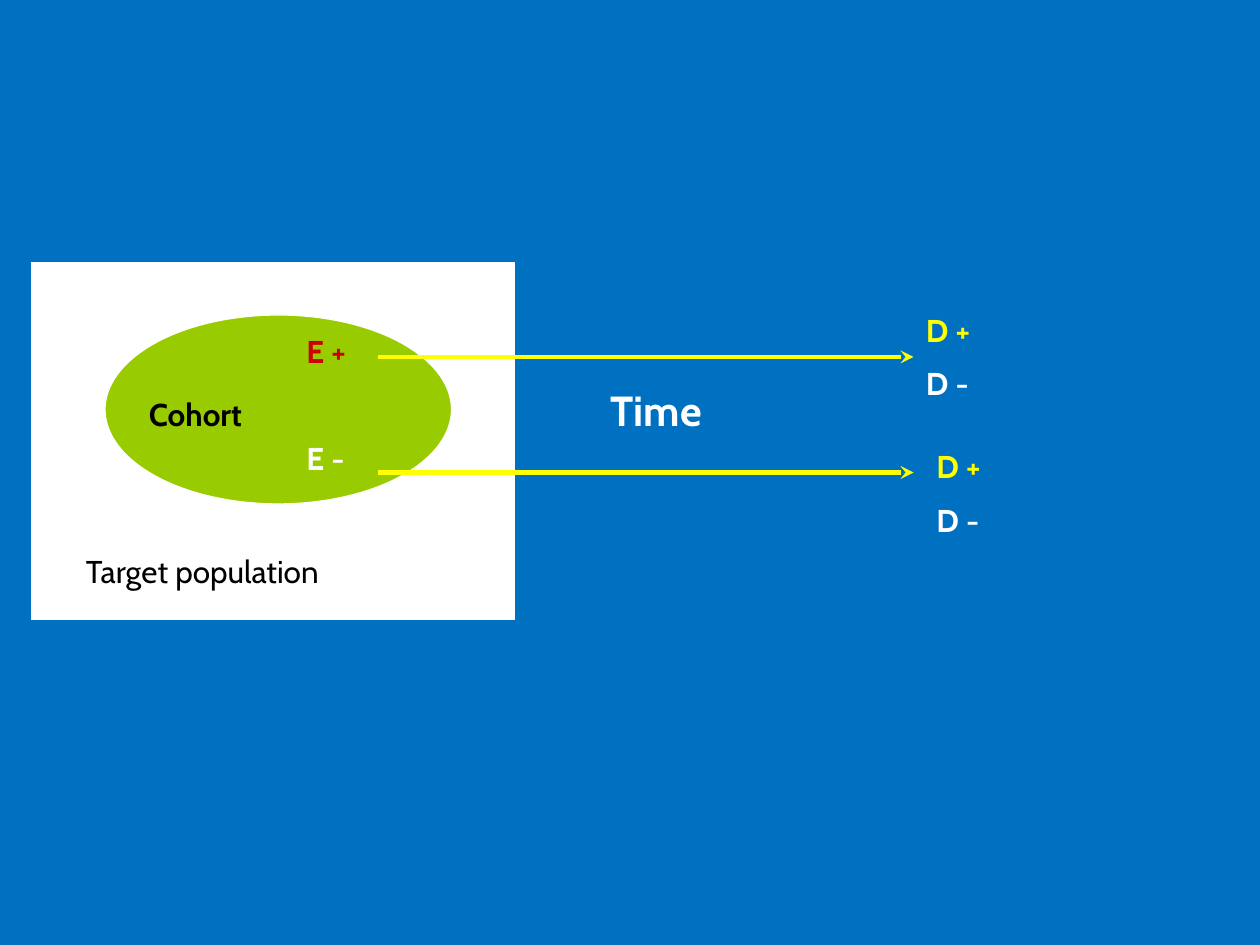
"""Build the cohort study design slide."""
from lxml.etree import SubElement
from pptx import Presentation
from pptx.dml.color import RGBColor
from pptx.enum.shapes import MSO_CONNECTOR, MSO_SHAPE
from pptx.enum.text import MSO_AUTO_SIZE
from pptx.oxml.ns import qn
from pptx.util import Pt

HUES = {
    "blue": "0070C0", "white": "FFFFFF", "green": "99CC00",
    "black": "000000", "red": "CC0000", "yellow": "FFFF00",
}


def hue(name):
    return RGBColor.from_string(HUES[name])


def label(box, lines, size=18, bold=True, gap=9):
    frame = slide.shapes.add_textbox(*map(Pt, box)).text_frame
    frame.word_wrap = True
    frame.auto_size = MSO_AUTO_SIZE.SHAPE_TO_FIT_TEXT
    form = {"name": "Cabin", "size": Pt(size), "bold": bold}
    for row, (text, tint) in enumerate(lines):
        para = frame.paragraphs[0] if row == 0 else frame.add_paragraph()
        if row:
            para.space_before = Pt(gap)
        run = para.add_run()
        run.text = text
        for key, value in form.items():
            setattr(run.font, key, value)
        run.font.color.rgb = hue(tint)


deck = Presentation()
deck.slide_width, deck.slide_height = Pt(720), Pt(540)
slide = deck.slides.add_slide(deck.slide_layouts[6])
slide.background.fill.solid()
slide.background.fill.fore_color.rgb = hue("blue")

for kind, box, tint in (
    (MSO_SHAPE.RECTANGLE, (18, 150, 276, 204), "white"),
    (MSO_SHAPE.OVAL, (60, 180, 198, 108), "green"),
):
    shape = slide.shapes.add_shape(kind, *map(Pt, box))
    shape.shadow.inherit = False
    shape.fill.solid()
    shape.fill.fore_color.rgb = hue(tint)
    shape.line.color.rgb = hue("white")
    shape.line.width = Pt(0.75)

label((42, 312, 180, 29), [("Target population", "black")], bold=False)
label((78, 222, 114, 29), [("Cohort", "black")])
label((168, 186, 48, 94), [("E +", "red"), ("E -", "white")], gap=39.5)

for top in (204, 270):
    arrow = slide.shapes.add_connector(
        MSO_CONNECTOR.STRAIGHT, Pt(216), Pt(top), Pt(522), Pt(top))
    arrow.line.color.rgb = hue("yellow")
    arrow.line.width = Pt(2.5)
    SubElement(arrow.line._get_or_add_ln(), qn("a:tailEnd"), type="stealth")
    SubElement(arrow._element.spPr, qn("a:effectLst"))

for left, top in ((522, 174), (528, 252)):
    label((left, top, 84, 61), [("D +", "yellow"), ("D -", "white")])
label((342, 216, 108, 36), [("Time", "white")], size=24)

deck.save("out.pptx")
